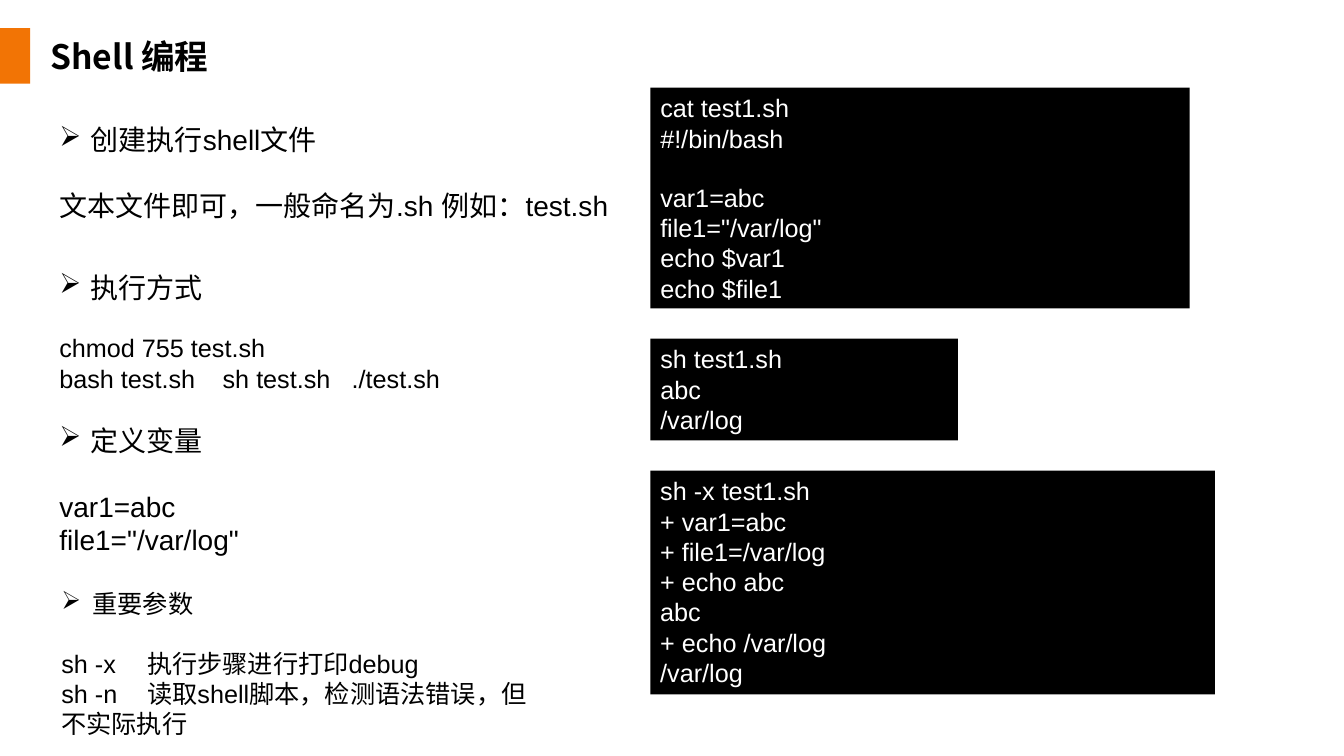
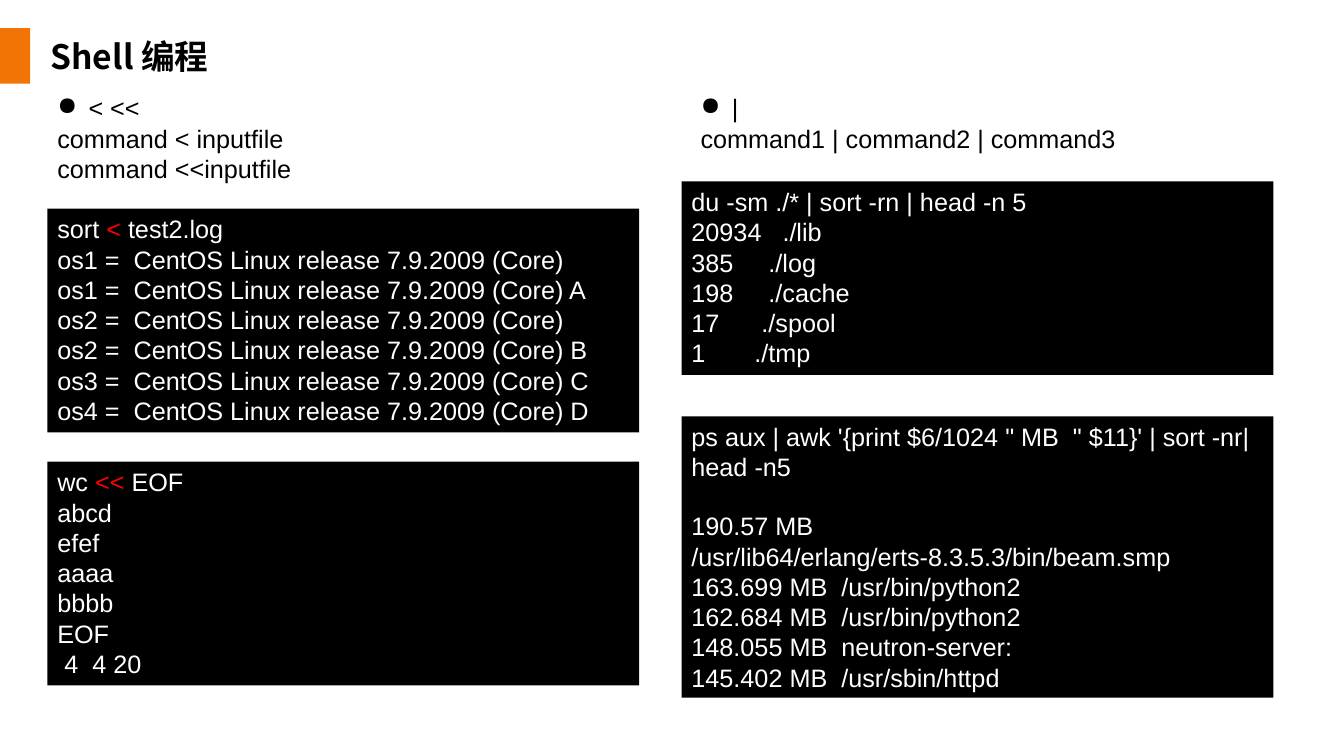
from lxml import etree
from pptx import Presentation
from pptx import util as u
from pptx.dml import color
from pptx.enum import shapes, text
from pptx.oxml import ns

ORANGE, BLACK, WHITE, RED = "F27405", "000000", "FFFFFF", "FF0000"
TITLE_FONT, BODY_FONT = "Noto Sans CJK SC", "Arial"
BULLET_INDENT = 0.31
CODE_SIZE = 18
LINE_HEIGHT = 1.15


def rgb(value):
    """Turn a hex string into a colour."""
    return color.RGBColor.from_string(value)


def inches(*values):
    """Turn numbers into lengths in inches."""
    return [u.Inches(value) for value in values]


def set_font(font, name, size, value, bold=False):
    """Set the face, size, colour and weight of a font."""
    font.name, font.size, font.bold = name, u.Pt(size), bold
    font.color.rgb = rgb(value)


def add_rectangle(slide, place, fill):
    """Add a plain filled rectangle without a line or shadow."""
    shape = slide.shapes.add_shape(shapes.MSO_SHAPE.RECTANGLE, *inches(*place))
    shape.shadow.inherit = False
    shape.fill.solid()
    shape.fill.fore_color.rgb = rgb(fill)
    shape.line.fill.background()
    return shape


def add_bullet(paragraph, character):
    """Give a paragraph a hanging bullet."""
    properties = paragraph._p.get_or_add_pPr()
    indent = u.Inches(BULLET_INDENT)
    properties.set("marL", str(indent))
    properties.set("indent", str(-indent))
    etree.SubElement(properties, ns.qn("a:buChar")).set("char", character)


def add_tabs(paragraph, stops):
    """Give a paragraph left tab stops."""
    tabs = etree.SubElement(paragraph._p.get_or_add_pPr(), ns.qn("a:tabLst"))
    for stop in stops:
        tab = etree.SubElement(tabs, ns.qn("a:tab"))
        tab.set("pos", str(u.Inches(stop)))
        tab.set("algn", "l")


def next_paragraph(frame):
    """Return the empty first paragraph or a new one."""
    first = frame.paragraphs[0]
    return frame.add_paragraph() if first.runs else first


def write_lines(frame, lines, size, value, tabs=()):
    """Write one paragraph a line, an empty line being a gap above the next."""
    gap = False
    for line in lines:
        if not line:
            gap = True
            continue
        paragraph = next_paragraph(frame)
        paragraph.alignment = text.PP_ALIGN.LEFT
        if gap:
            paragraph.space_before = u.Pt(size * LINE_HEIGHT)
            gap = False
        if tabs and "\t" in line:
            add_tabs(paragraph, tabs)
        paragraph.add_run().text = line
        set_font(paragraph.font, BODY_FONT, size, value)


def highlight(paragraph, operator):
    """Colour the operator within a paragraph red."""
    before, found, after = paragraph.runs[0].text.partition(operator)
    paragraph.runs[0].text = before
    marked = paragraph.add_run()
    marked.text = found
    marked.font.color.rgb = rgb(RED)
    paragraph.add_run().text = after


def add_terminal(slide, place, lines, operator=None):
    """Add a black box of white terminal text."""
    frame = add_rectangle(slide, place, BLACK).text_frame
    frame.word_wrap = True
    frame.vertical_anchor = text.MSO_ANCHOR.TOP
    write_lines(frame, lines, CODE_SIZE, WHITE)
    if operator:
        highlight(frame.paragraphs[0], operator)


def add_topic(slide, place, bullet, heading, lines, sizes=(18, 18), tabs=()):
    """Add a bulleted heading with its body lines."""
    frame = slide.shapes.add_textbox(*inches(*place)).text_frame
    frame.word_wrap = True
    heading_size, body_size = sizes
    paragraph = frame.paragraphs[0]
    add_bullet(paragraph, bullet)
    paragraph.add_run().text = heading
    set_font(paragraph.font, BODY_FONT, heading_size, BLACK)
    write_lines(frame, lines, body_size, BLACK, tabs)


def add_titled_slide(presentation, title):
    """Add a slide with the orange band and a formatted title."""
    slide = presentation.slides.add_slide(presentation.slide_layouts[5])
    add_rectangle(slide, (0, 0.28, 0.3, 0.55), ORANGE)
    shape = slide.shapes.title
    shape.left, shape.top, shape.width, shape.height = inches(0.4, 0.3, 11.5, 0.57)
    frame = shape.text_frame
    frame.text = title
    frame.vertical_anchor = text.MSO_ANCHOR.MIDDLE
    paragraph = frame.paragraphs[0]
    paragraph.alignment = text.PP_ALIGN.LEFT
    paragraph.line_spacing = 0.9
    set_font(paragraph.font, TITLE_FONT, 24, BLACK, bold=True)
    return slide


def build_script_slide(presentation):
    """Build the slide on writing and running a script."""
    slide = add_titled_slide(presentation, "Shell 编程")
    arrow, left, code_left = "➢", 0.49, 6.45
    add_topic(slide, (left, 1.17, 5.68, 1.15), arrow, "创建执行shell文件",
              ["", "文本文件即可，一般命名为.sh 例如：test.sh"], (20, 20))
    add_topic(slide, (left, 2.63, 5.54, 1.52), arrow, "执行方式",
              ["", "chmod 755 test.sh", "bash test.sh\tsh test.sh\t./test.sh"],
              (20, 18), (1.62, 2.9))
    add_topic(slide, (left, 4.15, 4.71, 1.42), arrow, "定义变量",
              ["", "var1=abc", 'file1="/var/log"'], (20, 20))
    add_topic(slide, (0.51, 5.79, 5.05, 1.61), arrow, "重要参数",
              ["", "sh -x\t执行步骤进行打印debug",
               "sh -n\t读取shell脚本，检测语法错误，但不实际执行"], tabs=(0.85,))
    add_terminal(slide, (code_left, 0.87, 5.35, 2.19),
                 ["cat test1.sh", "#!/bin/bash", "", "var1=abc",
                  'file1="/var/log"', "echo $var1", "echo $file1"])
    add_terminal(slide, (code_left, 3.36, 3.05, 1.01),
                 ["sh test1.sh", "abc", "/var/log"])
    add_terminal(slide, (code_left, 4.67, 5.6, 2.22),
                 ["sh -x test1.sh", "+ var1=abc", "+ file1=/var/log",
                  "+ echo abc", "abc", "+ echo /var/log", "/var/log"])


def build_redirect_slide(presentation):
    """Build the slide on input redirection and pipes."""
    slide = add_titled_slide(presentation, "Shell 编程")
    dot, left, right, width = "●", 0.47, 6.76, 5.87
    add_topic(slide, (left, 0.87, 6.67, 1.01), dot, "< <<",
              ["command < inputfile", "command <<inputfile"])
    releases = [("os1", ""), ("os1", " A"), ("os2", ""), ("os2", " B"),
                ("os3", " C"), ("os4", " D")]
    add_terminal(slide, (left, 2.07, width, 2.22),
                 ["sort < test2.log"]
                 + [f"{name} =  CentOS Linux release 7.9.2009 (Core){suffix}"
                    for name, suffix in releases], "<")
    add_terminal(slide, (left, 4.58, width, 2.22),
                 ["wc << EOF", "abcd", "efef", "aaaa", "bbbb", "EOF",
                  " 4  4 20"], "<<")
    add_topic(slide, (6.85, 0.87, width, 0.71), dot, "|",
              ["command1 | command2 | command3"])
    add_terminal(slide, (right, 1.8, width, 1.92),
                 ["du -sm ./* | sort -rn | head -n 5", "20934   ./lib",
                  "385     ./log", "198     ./cache", "17      ./spool",
                  "1       ./tmp"])
    add_terminal(slide, (right, 4.13, width, 2.79),
                 ["ps aux | awk '{print $6/1024 \" MB  \" $11}' | sort -nr|head -n5",
                  "", "190.57 MB  /usr/lib64/erlang/erts-8.3.5.3/bin/beam.smp",
                  "163.699 MB  /usr/bin/python2", "162.684 MB  /usr/bin/python2",
                  "148.055 MB  neutron-server:", "145.402 MB  /usr/sbin/httpd"])


def main():
    """Build and save the presentation."""
    presentation = Presentation()
    presentation.slide_width, presentation.slide_height = inches(13.33, 7.5)
    build_script_slide(presentation)
    build_redirect_slide(presentation)
    presentation.save("out.pptx")


if __name__ == "__main__":
    main()
